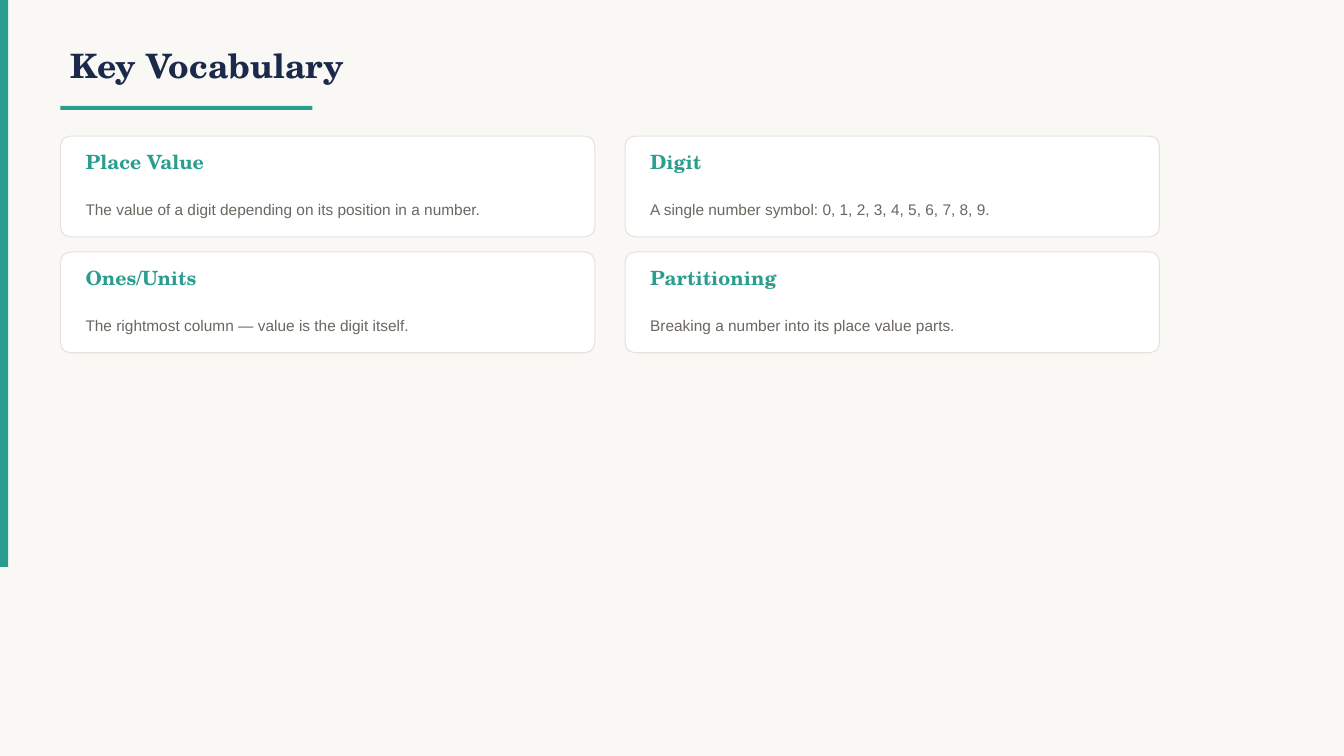
from pptx import Presentation
from pptx.dml.color import RGBColor
from pptx.enum.shapes import MSO_SHAPE
from pptx.enum.text import MSO_ANCHOR, PP_ALIGN
from pptx.util import Inches, Pt

COLORS = {
    "background": "FAF8F5",
    "accent": "2A9D8F",
    "navy": "1B2A4A",
    "card": "FFFFFF",
    "border": "E5E2DC",
    "body": "6B6660",
}
FORMATS = {
    "title": {"name": "TeX Gyre Schola", "size": Pt(24), "bold": True, "color": "navy", "spacing": 1.0},
    "term": {"name": "TeX Gyre Schola", "size": Pt(14), "bold": True, "color": "accent", "spacing": 1.0},
    "meaning": {"name": "Arial", "size": Pt(11), "bold": False, "color": "body", "spacing": 1.3},
}
VOCABULARY = [
    ("Place Value", "The value of a digit depending on its position in a number."),
    ("Digit", "A single number symbol: 0, 1, 2, 3, 4, 5, 6, 7, 8, 9."),
    ("Ones/Units", "The rightmost column — value is the digit itself."),
    ("Partitioning", "Breaking a number into its place value parts."),
]
COLUMNS = 2
LEFT, TOP = 0.6, 1.35
CARD_W, CARD_H = 5.3, 1
GAP_X, GAP_Y = 0.3, 0.15
INSET = 0.15

prs = Presentation()
prs.slide_width, prs.slide_height = Inches(13.33), Inches(7.5)
s = prs.slides.add_slide(prs.slide_layouts[5])
s.background.fill.solid()
s.background.fill.fore_color.rgb = RGBColor.from_string(COLORS["background"])


def add_block(kind, box, fill):
    sp = s.shapes.add_shape(kind, *map(Inches, box))
    sp.shadow.inherit = False
    sp.fill.solid()
    sp.fill.fore_color.rgb = RGBColor.from_string(COLORS[fill])
    sp.line.fill.background()
    return sp


def write(sp, text, style):
    tf = sp.text_frame
    tf.word_wrap = True
    tf.vertical_anchor = MSO_ANCHOR.MIDDLE
    p = tf.paragraphs[0]
    p.alignment = PP_ALIGN.LEFT
    p.line_spacing = FORMATS[style]["spacing"]
    r = p.add_run()
    r.text = text
    for key in ("name", "size", "bold"):
        setattr(r.font, key, FORMATS[style][key])
    r.font.color.rgb = RGBColor.from_string(COLORS[FORMATS[style]["color"]])


add_block(MSO_SHAPE.RECTANGLE, (0, 0, 0.08, prs.slide_height.inches * 0.75), "accent")

title = s.shapes.title
title.left, title.top, title.width, title.height = map(Inches, (LEFT, 0.3, 10, 0.7))
write(title, "Key Vocabulary", "title")

add_block(MSO_SHAPE.RECTANGLE, (LEFT, 1.05, 2.5, 0.04), "accent")

for i, (term, meaning) in enumerate(VOCABULARY):
    row, col = divmod(i, COLUMNS)
    x = LEFT + col * (CARD_W + GAP_X)
    y = TOP + row * (CARD_H + GAP_Y)
    card = add_block(MSO_SHAPE.ROUNDED_RECTANGLE, (x, y, CARD_W, CARD_H), "card")
    card.adjustments[0] = 0.1
    card.line.color.rgb = RGBColor.from_string(COLORS["border"])
    card.line.width = Pt(0.75)
    for text, style, dy, h in ((term, "term", 0.08, 0.35), (meaning, "meaning", 0.45, 0.5)):
        box = (x + INSET, y + dy, CARD_W - 2 * INSET, h)
        write(s.shapes.add_textbox(*map(Inches, box)), text, style)

prs.save("out.pptx")
